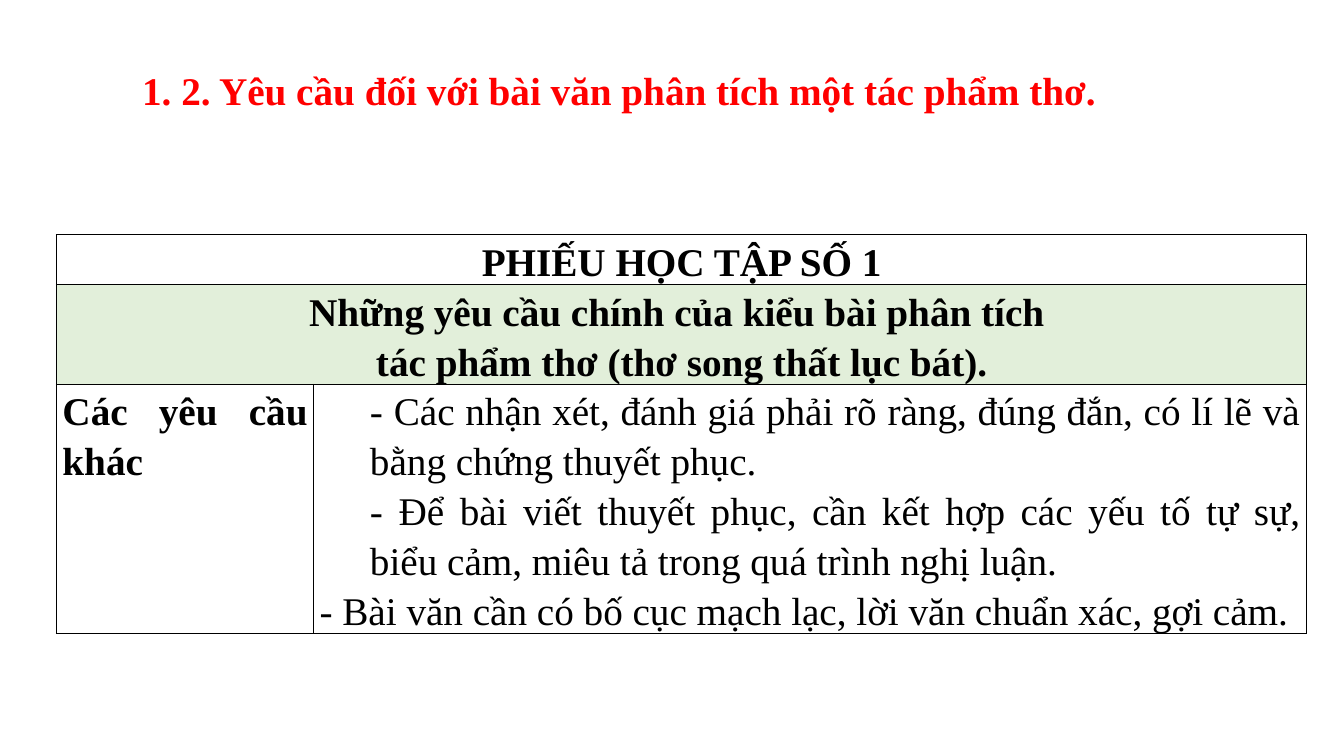
from lxml import etree
from pptx import Presentation
from pptx import util as u
from pptx.dml.color import RGBColor
from pptx.enum import text
from pptx.oxml import ns

COLORS = {"title": "FF0000", "ink": "000000", "band": "E2EFDA"}
ALIGN = text.PP_ALIGN
WIDTH, HEIGHT = 13.33, 7.5
LINE_ROW = 0.49


class Sheet:
    font = "Times New Roman"
    size = u.Pt(28)
    spacing = 1.15

    def __init__(self, prs):
        self.s = prs.slides.add_slide(prs.slide_layouts[5])
        self.width, self.height = prs.slide_width, prs.slide_height

    def place(self, x, y, w, h):
        return (round(x * self.width), round(y * self.height),
                round(w * self.width), round(h * self.height))

    def add_lines(self, tf, lines, align, color="ink", bold=True, indents=()):
        for i, line in enumerate(lines):
            p = tf.paragraphs[0] if i == 0 else tf.add_paragraph()
            p.text = line
            p.alignment = align
            p.line_spacing = self.spacing
            p.font.name, p.font.size, p.font.bold = self.font, self.size, bold
            p.font.color.rgb = RGBColor.from_string(COLORS[color])
            if i < len(indents):
                pPr = p._p.get_or_add_pPr()
                pPr.set("marL", str(u.Inches(indents[i])))
                pPr.set("indent", "0")

    def title(self, line, box):
        sp = self.s.shapes.title
        sp.left, sp.top, sp.width, sp.height = self.place(*box)
        tf = sp.text_frame
        tf.word_wrap = True
        tf.auto_size = text.MSO_AUTO_SIZE.NONE
        tf.vertical_anchor = text.MSO_ANCHOR.TOP
        self.add_lines(tf, [line], ALIGN.JUSTIFY, "title")

    def table(self, box, columns, line_counts):
        rows = len(line_counts)
        table = self.s.shapes.add_table(rows, len(columns), *self.place(*box)).table
        table.first_row = table.horz_banding = False
        for column, share in zip(table.columns, columns):
            column.width = round(share * self.width)
        for row, count in zip(table.rows, line_counts):
            row.height = u.Inches(LINE_ROW * count)
        for cell in table.iter_cells():
            self.border(cell)
            cell.fill.background()
            cell.margin_left = cell.margin_right = u.Inches(0.06)
            cell.margin_top = cell.margin_bottom = 0
        return table

    def border(self, cell):
        tcPr = cell._tc.get_or_add_tcPr()
        for side in ("a:lnL", "a:lnR", "a:lnT", "a:lnB"):
            ln = etree.SubElement(tcPr, ns.qn(side), w=str(u.Pt(1)))
            fill = etree.SubElement(ln, ns.qn("a:solidFill"))
            etree.SubElement(fill, ns.qn("a:srgbClr"), val=COLORS["ink"])

    def banner(self, table, row, lines, fill=None):
        cell = table.cell(row, 0)
        cell.merge(table.cell(row, len(table.columns) - 1))
        if fill:
            cell.fill.solid()
            cell.fill.fore_color.rgb = RGBColor.from_string(COLORS[fill])
        self.add_lines(cell.text_frame, lines, ALIGN.CENTER)


def main():
    prs = Presentation()
    prs.slide_width, prs.slide_height = u.Inches(WIDTH), u.Inches(HEIGHT)
    sheet = Sheet(prs)
    sheet.title("1. 2. Yêu cầu đối với bài văn phân tích một tác phẩm thơ.",
                (1.31 / WIDTH, 0.54 / HEIGHT, 9.77 / WIDTH, 0.6 / HEIGHT))

    line_counts = (1, 2, 5)
    table = sheet.table(
        (0.56 / WIDTH, 2.33 / HEIGHT, 12.4 / WIDTH, sum(line_counts) * LINE_ROW / HEIGHT),
        (2.55 / WIDTH, 9.85 / WIDTH), line_counts)
    sheet.banner(table, 0, ["PHIẾU HỌC TẬP SỐ 1"])
    sheet.banner(table, 1, ["Những yêu cầu chính của kiểu bài phân tích ",
                            "tác phẩm thơ (thơ song thất lục bát)."], "band")
    sheet.add_lines(table.cell(2, 0).text_frame, ["Các yêu cầu khác"], ALIGN.JUSTIFY)
    sheet.add_lines(table.cell(2, 1).text_frame, [
        "- Các nhận xét, đánh giá phải rõ ràng, đúng đắn, có lí lẽ và bằng chứng thuyết phục.",
        "- Để bài viết thuyết phục, cần kết hợp các yếu tố tự sự, biểu cảm, "
        "miêu tả trong quá trình nghị luận.",
        "- Bài văn cần có bố cục mạch lạc, lời văn chuẩn xác, gợi cảm.",
    ], ALIGN.JUSTIFY, bold=False, indents=(0.5, 0.5))
    prs.save("out.pptx")


if __name__ == "__main__":
    main()
